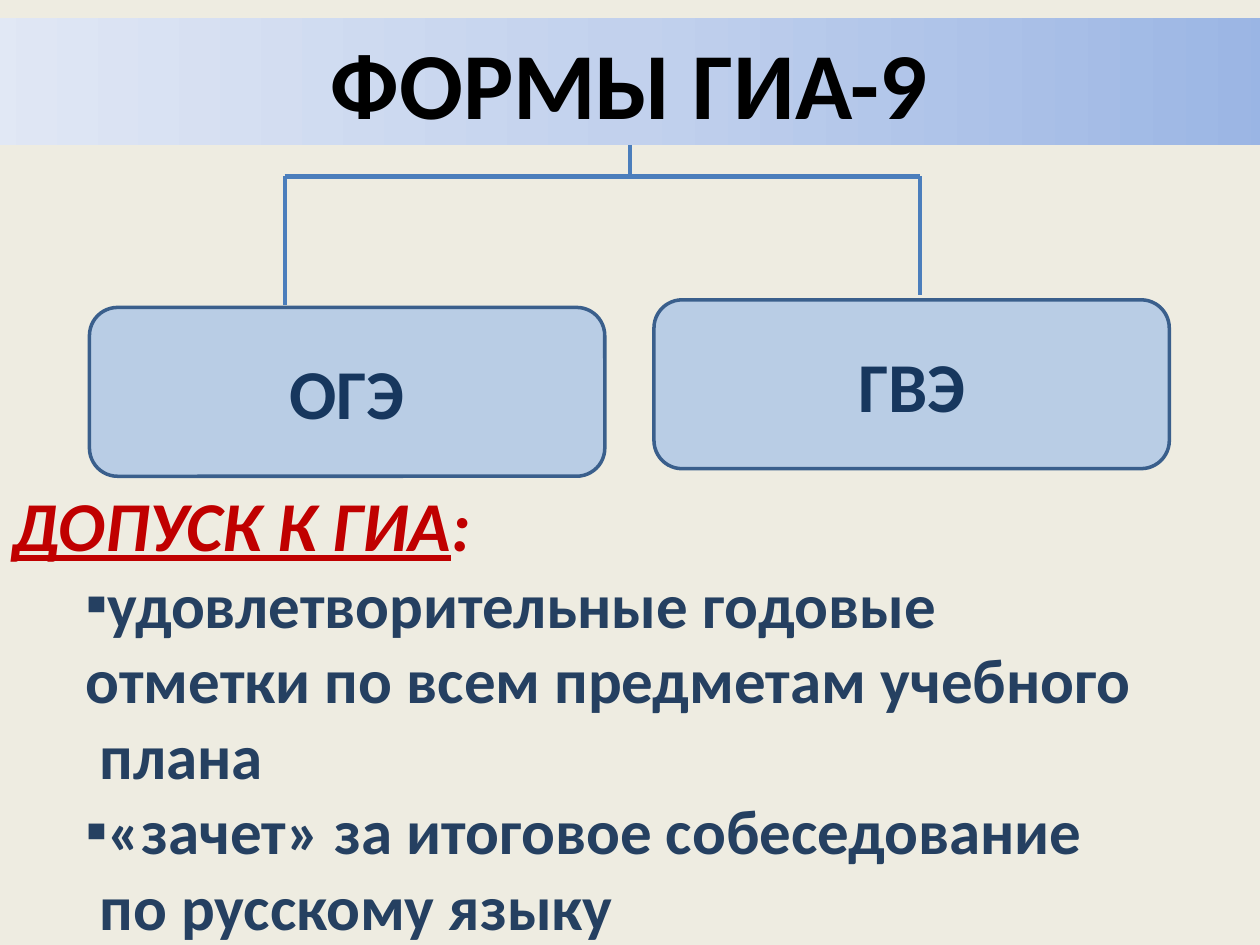
from copy import deepcopy

from lxml.etree import SubElement
from pptx import Presentation
from pptx.dml.color import RGBColor
from pptx.enum.shapes import MSO_CONNECTOR, MSO_SHAPE
from pptx.enum.text import MSO_ANCHOR, MSO_AUTO_SIZE, PP_ALIGN
from pptx.oxml.ns import qn
from pptx.util import Inches, Pt

CREAM = RGBColor(0xEE, 0xEC, 0xE1)
BLACK = RGBColor(0x00, 0x00, 0x00)
RED = RGBColor(0xC0, 0x00, 0x00)
NAVY = RGBColor(0x17, 0x37, 0x5E)
BODY_BLUE = RGBColor(0x25, 0x40, 0x61)
BOX_FILL = RGBColor(0xB9, 0xCD, 0xE5)
BOX_LINE = RGBColor(0x3A, 0x5F, 0x8C)
TREE_LINE = RGBColor(0x4B, 0x7E, 0xBC)
BAND = [(0, RGBColor(0xE1, 0xE8, 0xF5)),
        (0.5, RGBColor(0xC2, 0xD1, 0xED)),
        (1, RGBColor(0x9A, 0xB5, 0xE4))]

# Grid of 100 columns by 75 rows with square cells
COLS, ROWS = 100, 75
CELL = Inches(0.1)


def grid(*cells):
    return [round(c * CELL) for c in cells]


def add_run(p, text, size, color):
    r = p.add_run()
    r.text = text
    r.font.name = "Calibri"
    r.font.size = Pt(size)
    r.font.bold = True
    r.font.color.rgb = color
    return r


prs = Presentation()
prs.slide_width, prs.slide_height = grid(COLS, ROWS)
s = prs.slides.add_slide(prs.slide_layouts[5])
s.background.fill.solid()
s.background.fill.fore_color.rgb = CREAM

# Title on a gradient band
title = s.shapes.title
title.left, title.top, title.width, title.height = grid(-2, 1.4, 103.9, 10.1)
title.fill.gradient()
title.fill.gradient_angle = 0
stops = title.fill.gradient_stops
first = title.fill._fill._gradFill.find(qn("a:gsLst"))[0]
first.addnext(deepcopy(first))
for stop, (position, color) in zip(title.fill.gradient_stops, BAND):
    stop.position = position
    stop.color.rgb = color
tf = title.text_frame
tf.auto_size = MSO_AUTO_SIZE.NONE
tf.vertical_anchor = MSO_ANCHOR.MIDDLE
p = tf.paragraphs[0]
p.alignment = PP_ALIGN.CENTER
add_run(p, "ФОРМЫ ГИА-9", 54, BLACK)

# Boxes for the two exam forms
for label, left, top in [("ОГЭ", 7.1, 24.4), ("ГВЭ", 51.9, 23.8)]:
    sp = s.shapes.add_shape(MSO_SHAPE.ROUNDED_RECTANGLE, *grid(left, top, 40.9, 13.4))
    sp.shadow.inherit = False
    sp.fill.solid()
    sp.fill.fore_color.rgb = BOX_FILL
    sp.line.color.rgb = BOX_LINE
    sp.line.width = Pt(2)
    tf = sp.text_frame
    tf.vertical_anchor = MSO_ANCHOR.MIDDLE
    p = tf.paragraphs[0]
    p.alignment = PP_ALIGN.CENTER
    add_run(p, label, 40, NAVY)

# Tree lines from the title to the boxes
LEFT, MIDDLE, RIGHT, BRANCH = 22.6, 50, 73, 14
for x1, y1, x2, y2, width in [
    (MIDDLE, 11.5, MIDDLE, BRANCH, 2.25),
    (LEFT, BRANCH, RIGHT, BRANCH, 2.5),
    (LEFT, BRANCH, LEFT, 24.2, 2.5),
    (RIGHT, BRANCH, RIGHT, 23.4, 2.25),
]:
    line = s.shapes.add_connector(MSO_CONNECTOR.STRAIGHT, *grid(x1, y1, x2, y2))
    line.line.color.rgb = TREE_LINE
    line.line.width = Pt(width)
    SubElement(line._element.spPr, qn("a:effectLst"))

# Admission requirements
tf = s.shapes.add_textbox(*grid(0, 37.7, COLS, 38)).text_frame
tf.word_wrap = True
p = tf.paragraphs[0]
for text, underline in [("ДОПУСК К ГИА", True), (":", False)]:
    r = add_run(p, text, 40, RED)
    r.font.italic = True
    r.font.underline = underline

for text, bullet, align in [
    ("удовлетворительные годовые", True, PP_ALIGN.LEFT),
    ("отметки по всем предметам учебного", False, PP_ALIGN.JUSTIFY),
    (" плана", False, PP_ALIGN.LEFT),
    ("«зачет» за итоговое собеседование", True, PP_ALIGN.LEFT),
    (" по русскому языку", False, PP_ALIGN.LEFT),
]:
    p = tf.add_paragraph()
    p.alignment = align
    pPr = p._p.get_or_add_pPr()
    pPr.set("marL", str(Inches(0.52)))
    pPr.set("indent", str(Inches(0.06)))
    if bullet:
        SubElement(pPr, qn("a:buFont"), typeface="Arial")
        SubElement(pPr, qn("a:buChar"), char="▪")
    add_run(p, text, 36, BODY_BLUE)

prs.save("out.pptx")
